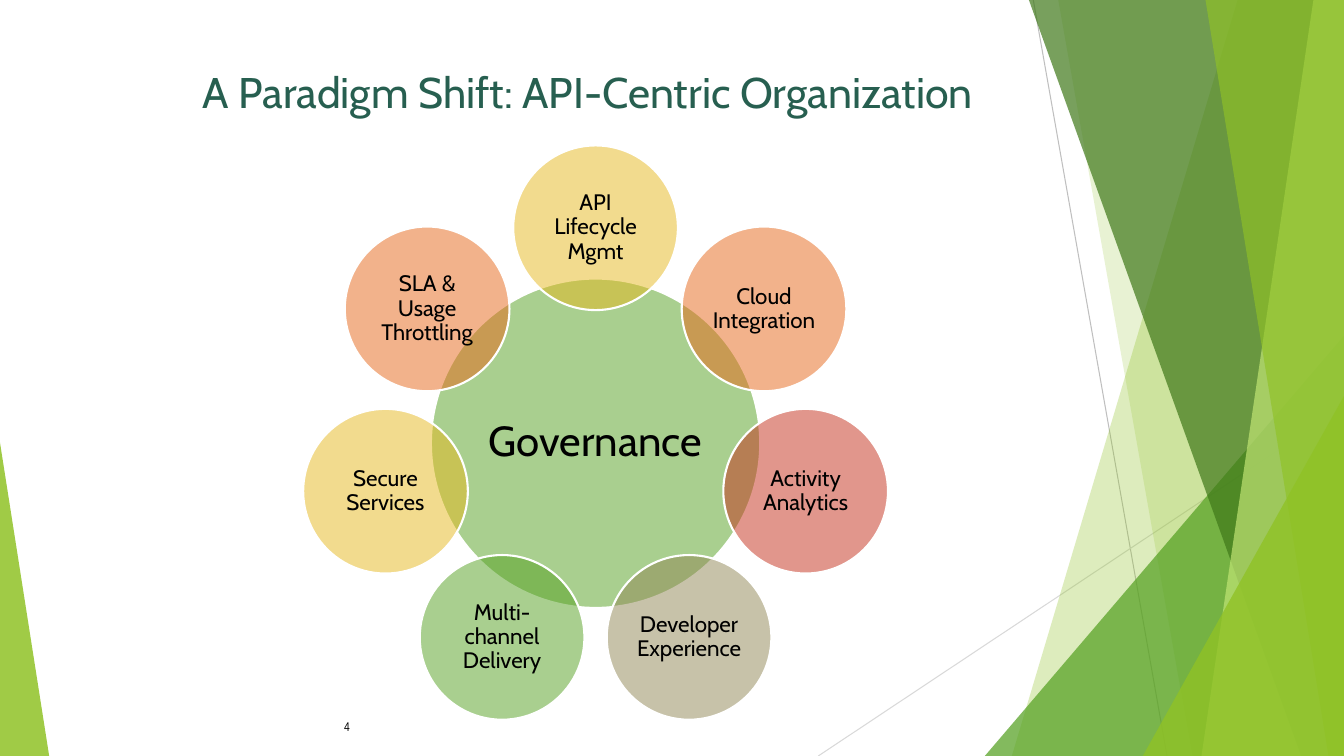
import math
from dataclasses import dataclass

from lxml import etree
from pptx import Presentation
from pptx.dml.color import RGBColor
from pptx.enum.shapes import MSO_CONNECTOR, MSO_SHAPE
from pptx.enum.text import MSO_ANCHOR, MSO_AUTO_SIZE, PP_ALIGN
from pptx.oxml.ns import qn
from pptx.util import Cm, Pt

OVAL, TRIANGLE = MSO_SHAPE.OVAL, MSO_SHAPE.ISOSCELES_TRIANGLE
STRAIGHT = MSO_CONNECTOR.STRAIGHT
LEFT, CENTER, RIGHT = PP_ALIGN.LEFT, PP_ALIGN.CENTER, PP_ALIGN.RIGHT
MIDDLE = MSO_ANCHOR.MIDDLE
NO_AUTOFIT = MSO_AUTO_SIZE.NONE

SLIDE_W, SLIDE_H = 33.87, 19.05
FONT = "Cabin"
LIME, GREEN = "90C226", "54A021"


@dataclass
class Line:
    x1: float
    y1: float
    x2: float
    y2: float
    color: str


@dataclass
class Facet:
    """Band from a slanted left edge to the right edge of the slide."""
    top_x: float
    bottom_x: float
    color: str
    opacity: int


@dataclass
class Wedge:
    """Right-angled triangle standing on the bottom of the slide."""
    left: float
    width: float
    height: float
    apex: float
    color: str
    opacity: int


@dataclass
class Petal:
    text: str
    color: str


LINES = [
    Line(26.04, 0, 29.41, SLIDE_H, "BFBFBF"),
    Line(SLIDE_W, 10.24, 20.62, SLIDE_H, "D9D9D9"),
]
BACKDROP = [
    Facet(31.19, 25.5, LIME, 30),
    Facet(26.67, 30.05, LIME, 20),
    Wedge(24.82, 9.05, 10.59, 1, GREEN, 72),
    Facet(25.93, 32.79, "3F7819", 70),
    Facet(33.1, 30.28, "C0E474", 70),
    Facet(30.38, 33.48, LIME, 65),
    Wedge(28.8, 5.07, 9.07, 1, LIME, 80),
    Wedge(0, 1.24, 7.9, 0, LIME, 85),
]

# Petals run clockwise from the top
PETALS = [
    Petal("API Lifecycle Mgmt", "E6B91E"),
    Petal("Cloud Integration", "E76618"),
    Petal("Activity Analytics", "C42F1A"),
    Petal("Developer Experience", "918655"),
    Petal("Multi-channel Delivery", GREEN),
    Petal("Secure Services", "E6B91E"),
    Petal("SLA & Usage Throttling", "E76618"),
]
CENTER_X, CENTER_Y, RING_RADIUS = 15.01, 11.17, 5.43
HUB_SIZE, PETAL_SIZE = 8.3, 4.15


def rgb(value: str) -> RGBColor:
    return RGBColor.from_string(value)


def fill_shape(sp, color: str, opacity: int) -> None:
    sp.shadow.inherit = False
    sp.fill.solid()
    sp.fill.fore_color.rgb = rgb(color)
    clr = sp.fill._xPr.find(qn("a:solidFill"))[0]
    etree.SubElement(clr, qn("a:alpha"), val=str(opacity * 1000))


def write(sp, text: str, size: float, color: str, align, font: str = FONT):
    tf = sp.text_frame
    tf.text = text
    tf.word_wrap = True
    tf.auto_size = NO_AUTOFIT
    tf.vertical_anchor = MIDDLE
    p = tf.paragraphs[0]
    p.alignment = align
    r = p.runs[0]
    r.font.size = Pt(size)
    r.font.name = font
    r.font.color.rgb = rgb(color)
    return tf


def draw_line(shapes, line: Line) -> None:
    cxn = shapes.add_connector(STRAIGHT, Cm(line.x1), Cm(line.y1), Cm(line.x2), Cm(line.y2))
    cxn.line.color.rgb = rgb(line.color)
    cxn.line.width = Pt(0.75)
    etree.SubElement(cxn._element.spPr, qn("a:effectLst"))


def draw_facet(shapes, facet: Facet):
    builder = shapes.build_freeform(Cm(facet.top_x), 0)
    builder.add_line_segments([
        (Cm(SLIDE_W), 0), (Cm(SLIDE_W), Cm(SLIDE_H)), (Cm(facet.bottom_x), Cm(SLIDE_H)),
    ])
    return builder.convert_to_shape()


def draw_wedge(shapes, wedge: Wedge):
    sp = shapes.add_shape(TRIANGLE, Cm(wedge.left), Cm(SLIDE_H - wedge.height),
                          Cm(wedge.width), Cm(wedge.height))
    sp.adjustments[0] = wedge.apex
    return sp


def draw_circle(shapes, x: float, y: float, size: float, text: str, color: str,
                font_size: float, inset: float) -> None:
    sp = shapes.add_shape(OVAL, Cm(x - size / 2), Cm(y - size / 2), Cm(size), Cm(size))
    fill_shape(sp, color, 50)
    sp.line.color.rgb = rgb("FFFFFF")
    sp.line.width = Pt(1.5)
    tf = write(sp, text, font_size, "000000", CENTER)
    tf.margin_left = tf.margin_right = tf.margin_top = tf.margin_bottom = Cm(inset)
    tf.paragraphs[0].line_spacing = 0.9


def main() -> None:
    prs = Presentation()
    prs.slide_width, prs.slide_height = Cm(SLIDE_W), Cm(SLIDE_H)
    slide = prs.slides.add_slide(prs.slide_layouts[5])
    shapes = slide.shapes

    # Backdrop
    for line in LINES:
        draw_line(shapes, line)
    for item in BACKDROP:
        draw = draw_facet if isinstance(item, Facet) else draw_wedge
        sp = draw(shapes, item)
        fill_shape(sp, item.color, item.opacity)
        sp.line.fill.background()

    # Title and page number
    title = shapes.title
    title.left, title.top, title.width, title.height = Cm(4.85), Cm(1.52), Cm(22.86), Cm(1.57)
    write(title, "A Paradigm Shift: API-Centric Organization", 30.6, "275F50", LEFT)
    number = shapes.add_textbox(Cm(5.51), Cm(17.98), Cm(3.56), Cm(0.64))
    write(number, "4", 9, "000000", RIGHT, "Arial Narrow")

    # Hub and petals
    draw_circle(shapes, CENTER_X, CENTER_Y, HUB_SIZE, "Governance", GREEN, 30, 0.1)
    for i, petal in enumerate(PETALS):
        angle = 2 * math.pi * i / len(PETALS)
        draw_circle(shapes, CENTER_X + RING_RADIUS * math.sin(angle),
                    CENTER_Y - RING_RADIUS * math.cos(angle),
                    PETAL_SIZE, petal.text, petal.color, 16, 0.05)

    prs.save("out.pptx")


if __name__ == "__main__":
    main()
